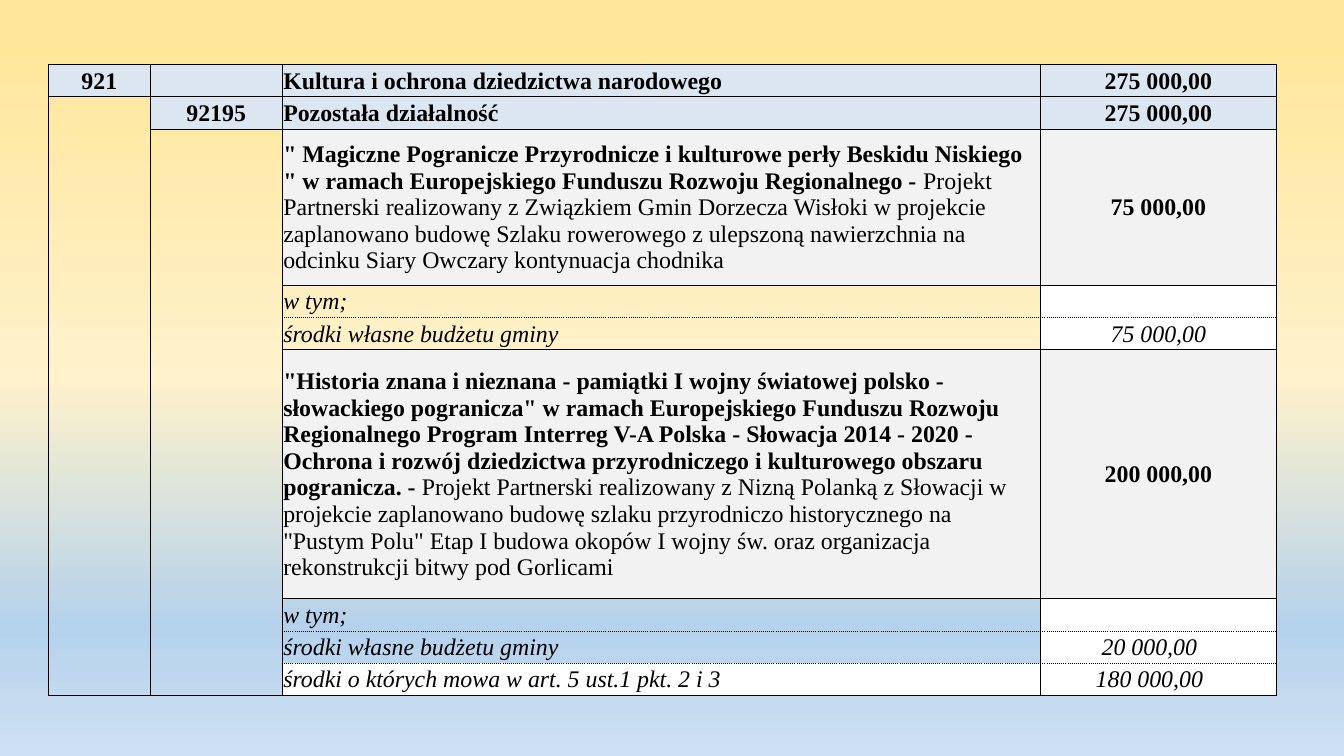
from dataclasses import dataclass
from typing import Optional

import lxml.etree
import pptx
import pptx.dml.color
import pptx.enum.text
import pptx.oxml.ns
import pptx.util

qn = pptx.oxml.ns.qn
Inches = pptx.util.Inches


@dataclass(frozen=True)
class Theme:
    font: str = "Times New Roman"
    size: float = 17
    ink: str = "000000"
    heading: str = "DCE6F1"
    project: str = "F2F2F2"
    white: str = "FFFFFF"
    inner_line: float = 0.5
    outer_line: float = 1
    backdrop: tuple = ((4, "FFE699"), (50, "FFF2CC"), (83, "B5D2EC"), (100, "CEE1F2"))


THEME = Theme()
NO_STYLE = "{2D5ABB26-0587-4C30-8999-92F81FD0307C}"
COLUMN_WIDTHS = (1.01, 1.31, 7.52, 2.34)
CODES = ("921", "92195")


@dataclass(frozen=True)
class BudgetRow:
    title: str
    amount: str = ""
    detail: str = ""
    height: float = 0.32
    title_fill: Optional[str] = None
    amount_fill: str = THEME.white
    italic: bool = True
    dotted_below: bool = False
    amount_inset: float = 0.01


def heading(title: str, amount: str) -> BudgetRow:
    return BudgetRow(title, amount, title_fill=THEME.heading,
                     amount_fill=THEME.heading, italic=False)


def project(title: str, detail: str, amount: str, height: float) -> BudgetRow:
    return BudgetRow(title, amount, detail, height, THEME.project, THEME.project, italic=False)


INCLUDING = BudgetRow("w tym;", dotted_below=True)
OWN_FUNDS = "środki własne budżetu gminy"
ROWS = (
    heading("Kultura i ochrona dziedzictwa narodowego", "275 000,00"),
    heading("Pozostała działalność", "275 000,00"),
    project(
        '" Magiczne Pogranicze Przyrodnicze i kulturowe perły Beskidu Niskiego " '
        "w ramach Europejskiego Funduszu Rozwoju Regionalnego - ",
        "Projekt Partnerski realizowany z Związkiem Gmin Dorzecza Wisłoki w projekcie "
        "zaplanowano budowę Szlaku rowerowego z ulepszoną nawierzchnia na odcinku "
        "Siary Owczary kontynuacja chodnika",
        "75 000,00", 1.55),
    INCLUDING,
    BudgetRow(OWN_FUNDS, "75 000,00"),
    project(
        '"Historia znana i nieznana - pamiątki I wojny światowej polsko - słowackiego '
        'pogranicza" w ramach Europejskiego Funduszu Rozwoju Regionalnego Program '
        "Interreg V-A Polska - Słowacja 2014 - 2020 - Ochrona i rozwój dziedzictwa "
        "przyrodniczego i kulturowego obszaru pogranicza. -",
        " Projekt Partnerski realizowany z Nizną Polanką z Słowacji w projekcie "
        "zaplanowano budowę szlaku przyrodniczo historycznego na "
        '"Pustym Polu" Etap I budowa okopów I wojny św. oraz organizacja '
        "rekonstrukcji bitwy pod Gorlicami",
        "200 000,00", 2.47),
    INCLUDING,
    BudgetRow(OWN_FUNDS, "20 000,00", dotted_below=True, amount_inset=0.19),
    BudgetRow("środki o których mowa w art. 5 ust.1 pkt. 2 i 3", "180 000,00",
              title_fill=THEME.white, amount_inset=0.19),
)


def add_text(para, text: str, *, bold: bool = False, italic: bool = False) -> None:
    if not text:
        return
    span = para.add_run()
    span.text = text
    span.font.name = THEME.font
    span.font.size = pptx.util.Pt(THEME.size)
    span.font.bold = bold
    span.font.italic = italic
    span.font.color.rgb = pptx.dml.color.RGBColor.from_string(THEME.ink)


def paint_cell(cell, color: Optional[str]) -> None:
    if color is None:
        cell.fill.background()
    else:
        cell.fill.solid()
        cell.fill.fore_color.rgb = pptx.dml.color.RGBColor.from_string(color)


def add_color(parent, color: str) -> None:
    lxml.etree.SubElement(parent, qn("a:srgbClr"), val=color)


def line_below(row: int, column: int) -> Optional[str]:
    if row in (-1, len(ROWS) - 1):
        return "solid"
    if column < len(CODES):
        return "solid" if row <= column else None
    return "dot" if ROWS[row].dotted_below else "solid"


def draw_borders(cell, row: int, column: int) -> None:
    last_column = len(COLUMN_WIDTHS) - 1
    edges = (
        ("a:lnL", THEME.outer_line if column == 0 else THEME.inner_line, "solid"),
        ("a:lnR", THEME.outer_line if column == last_column else THEME.inner_line, "solid"),
        ("a:lnT", THEME.inner_line, line_below(row - 1, column)),
        ("a:lnB", THEME.inner_line, line_below(row, column)),
    )
    properties = cell._tc.get_or_add_tcPr()
    for position, (tag, width, dash) in enumerate(edges):
        line = lxml.etree.Element(qn(tag), w=str(pptx.util.Pt(width)))
        if dash is None:
            lxml.etree.SubElement(line, qn("a:noFill"))
        else:
            add_color(lxml.etree.SubElement(line, qn("a:solidFill")), THEME.ink)
            lxml.etree.SubElement(line, qn("a:prstDash"), val=dash)
        properties.insert(position, line)


def fill_cell(cell, row: int, column: int) -> None:
    entry = ROWS[row]
    cell.vertical_anchor = pptx.enum.text.MSO_ANCHOR.MIDDLE
    cell.margin_left = cell.margin_right = cell.margin_top = Inches(0.01)
    cell.margin_bottom = 0
    para = cell.text_frame.paragraphs[0]
    if column != 2:
        para.alignment = pptx.enum.text.PP_ALIGN.CENTER
    if column < len(CODES):
        paint_cell(cell, THEME.heading if row <= column else None)
        add_text(para, CODES[column] if row == column else "", bold=True)
    elif column == 2:
        paint_cell(cell, entry.title_fill)
        add_text(para, entry.title, bold=not entry.italic, italic=entry.italic)
        add_text(para, entry.detail)
    else:
        paint_cell(cell, entry.amount_fill)
        cell.margin_right = Inches(entry.amount_inset)
        add_text(para, entry.amount, bold=not entry.italic, italic=entry.italic)
    draw_borders(cell, row, column)


def paint_backdrop(page) -> None:
    fill = page.background.fill
    fill.gradient()
    fill.gradient_angle = 270
    stops = page.element.find(".//" + qn("a:gsLst"))
    for stop in list(stops):
        stops.remove(stop)
    for percent, color in THEME.backdrop:
        add_color(lxml.etree.SubElement(stops, qn("a:gs"), pos=str(percent * 1000)), color)


def add_budget_table(page) -> None:
    frame = page.shapes.add_table(
        len(ROWS), len(COLUMN_WIDTHS), Inches(0.48), Inches(0.64),
        Inches(sum(COLUMN_WIDTHS)), Inches(sum(entry.height for entry in ROWS)))
    table = frame.table
    table.first_row = table.horz_banding = False
    frame.element.find(".//" + qn("a:tableStyleId")).text = NO_STYLE
    for column, width in enumerate(COLUMN_WIDTHS):
        table.columns[column].width = Inches(width)
    for row, entry in enumerate(ROWS):
        table.rows[row].height = Inches(entry.height)
        for column in range(len(COLUMN_WIDTHS)):
            fill_cell(table.cell(row, column), row, column)


def main() -> None:
    deck = pptx.Presentation()
    deck.slide_width = Inches(13.33)
    deck.slide_height = Inches(7.5)
    page = deck.slides.add_slide(deck.slide_layouts[6])
    paint_backdrop(page)
    add_budget_table(page)
    deck.save("out.pptx")


if __name__ == "__main__":
    main()
